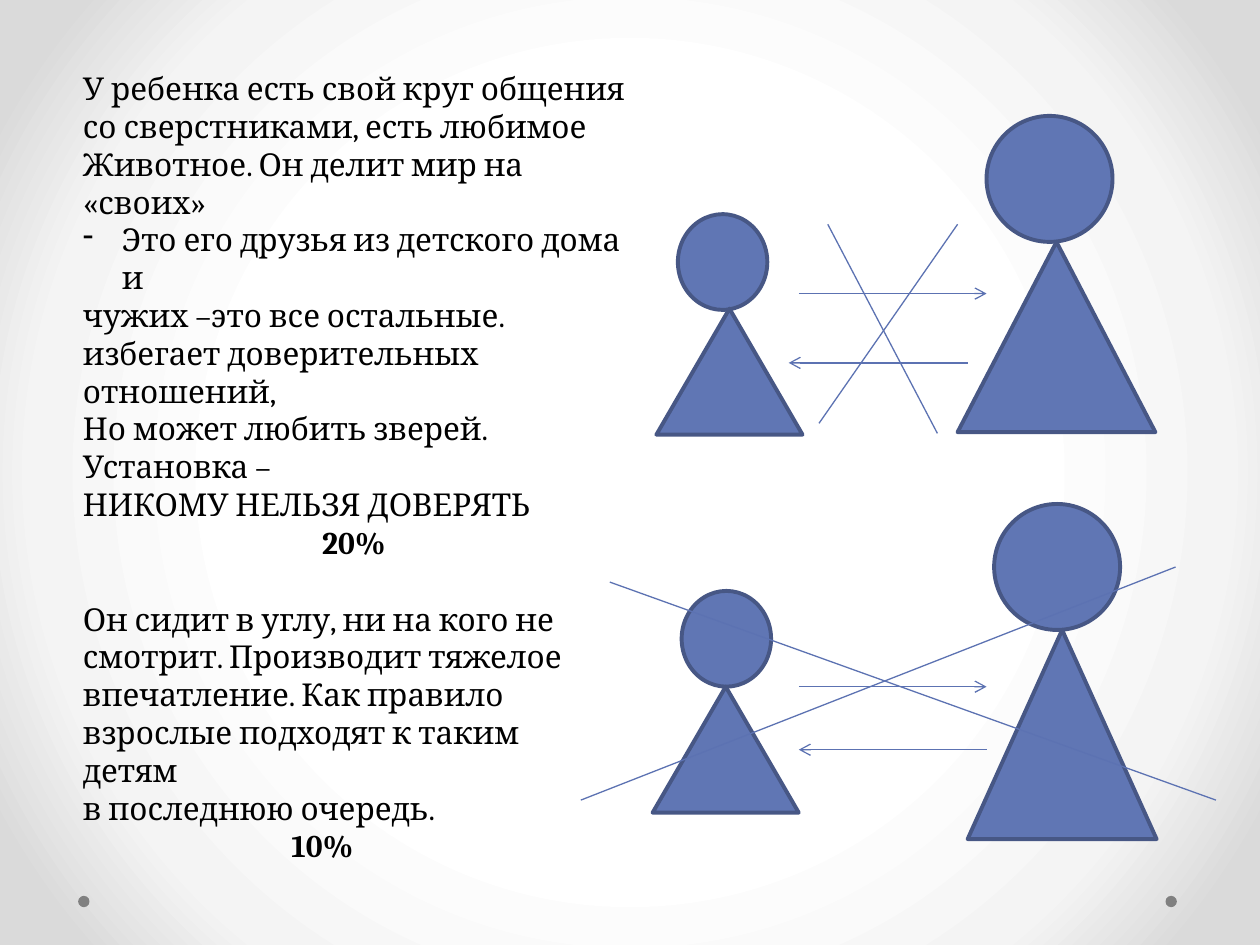
from lxml import etree
from pptx import Presentation
from pptx.dml.color import RGBColor
from pptx.enum.shapes import MSO_CONNECTOR, MSO_SHAPE
from pptx.enum.text import MSO_AUTO_SIZE, PP_ALIGN
from pptx.oxml import parse_xml
from pptx.oxml.ns import nsdecls, qn
from pptx.util import Inches, Pt

ELLIPSE = MSO_SHAPE.OVAL
TRIANGLE = MSO_SHAPE.ISOSCELES_TRIANGLE
STRAIGHT = MSO_CONNECTOR.STRAIGHT
CENTER = PP_ALIGN.CENTER
FIT_SHAPE = MSO_AUTO_SIZE.SHAPE_TO_FIT_TEXT

BLUE = RGBColor(0x60, 0x76, 0xB4)
OUTLINE = RGBColor(0x47, 0x57, 0x85)
LINE_BLUE = RGBColor(0x5C, 0x72, 0xB2)
GRAY = RGBColor(0x80, 0x80, 0x80)
BLACK = RGBColor(0, 0, 0)
BACKGROUND_STOPS = [(50, "FFFFFF"), (76, "F4F4F4"), (92, "DADADA")]

FONT = "Cambria"
TEXT_LEFT = 0.56
BULLET_INDENT = 0.31
DOT_SIZE, DOT_TOP = 0.09, 7.11
DOT_LEFTS = [9.25, 0.62]

ADULT_HEAD = (1, 1)
CHILD_HEAD = (0.71, 0.76)
CHILD_BODY = (1.16, 1)
FIGURES = [
    {"head": (7.83, 0.92, *ADULT_HEAD), "body": (7.6, 1.92, 1.57, 1.51)},
    {"head": (7.89, 4, *ADULT_HEAD), "body": (7.68, 5, 1.5, 1.66)},
    {"head": (5.38, 1.7, *CHILD_HEAD), "body": (5.21, 2.45, *CHILD_BODY)},
    {"head": (5.41, 4.69, *CHILD_HEAD), "body": (5.18, 5.45, *CHILD_BODY)},
]
ARROWS = [
    (6.34, 2.33, 7.83, 2.33),
    (7.68, 2.88, 6.26, 2.88),
    (6.34, 5.45, 7.83, 5.45),
    (7.83, 5.95, 6.34, 5.95),
]
CROSSES = [
    (7.6, 1.78, 6.5, 3.36),
    (6.57, 1.78, 7.44, 3.44),
    (4.84, 4.62, 9.65, 6.35),
    (4.61, 6.35, 9.33, 4.5),
]
TEXTS = [
    {
        "top": 0.5, "width": 4.58, "height": 3.13,
        "lines": [
            "У ребенка есть свой круг общения",
            "со сверстниками, есть любимое",
            "Животное. Он делит мир на «своих»",
            "Это его друзья из детского дома и",
            "чужих –это все остальные.",
            "избегает доверительных отношений,",
            "Но может любить зверей.",
            "Установка –",
            "НИКОМУ НЕЛЬЗЯ ДОВЕРЯТЬ",
        ],
        "bulleted": [3],
        "share": "20%",
    },
    {
        "top": 4.71, "width": 4.2, "height": 1.92,
        "lines": [
            "Он сидит в углу, ни на кого не",
            "смотрит. Производит тяжелое",
            "впечатление. Как правило",
            "взрослые подходят к таким детям",
            "в последнюю очередь.",
        ],
        "bulleted": [],
        "share": "10%",
    },
]


def set_background(slide):
    stops = "".join(
        f'<a:gs pos="{position * 1000}"><a:srgbClr val="{color}"/></a:gs>'
        for position, color in BACKGROUND_STOPS
    )
    slide.background.fill.gradient()
    old_fill = slide.element.find(".//" + qn("a:gradFill"))
    new_fill = parse_xml(
        f'<a:gradFill {nsdecls("a")} rotWithShape="1"><a:gsLst>{stops}</a:gsLst>'
        '<a:path path="circle"><a:fillToRect l="50000" t="50000" r="50000" b="50000"/>'
        "</a:path></a:gradFill>"
    )
    old_fill.getparent().replace(old_fill, new_fill)


def add_filled_shape(slide, kind, box, color, outline=None):
    shape = slide.shapes.add_shape(kind, *map(Inches, box))
    shape.shadow.inherit = False
    shape.fill.solid()
    shape.fill.fore_color.rgb = color
    if outline is None:
        shape.line.fill.background()
    else:
        shape.line.color.rgb = outline
        shape.line.width = Pt(2.25)


def add_line(slide, points, arrow=False):
    connector = slide.shapes.add_connector(STRAIGHT, *map(Inches, points))
    connector.line.color.rgb = LINE_BLUE
    connector.line.width = Pt(0.75)
    properties = connector.element.spPr
    if arrow:
        etree.SubElement(properties.find(qn("a:ln")), qn("a:tailEnd"), type="arrow")
    etree.SubElement(properties, qn("a:effectLst"))


def add_bullet(paragraph):
    properties = paragraph._p.get_or_add_pPr()
    properties.set("marL", str(Inches(BULLET_INDENT)))
    properties.set("indent", str(-Inches(BULLET_INDENT)))
    etree.SubElement(properties, qn("a:buChar"), char="-")


def add_text(slide, text):
    box = (TEXT_LEFT, text["top"], text["width"], text["height"])
    frame = slide.shapes.add_textbox(*map(Inches, box)).text_frame
    frame.word_wrap = False
    frame.auto_size = FIT_SHAPE
    frame.text = "\n".join([*text["lines"], text["share"]])
    for paragraph in frame.paragraphs:
        paragraph.font.name = FONT
        paragraph.font.size = Pt(18)
        paragraph.font.color.rgb = BLACK
        for run in paragraph.runs:
            run.font.name = FONT
            run.font.size = Pt(18)
            run.font.color.rgb = BLACK
    for index in text["bulleted"]:
        paragraph = frame.paragraphs[index]
        properties = paragraph._p.get_or_add_pPr()
        default_run = properties.find(qn("a:defRPr"))
        add_bullet(paragraph)
        properties.append(default_run)
    share = frame.paragraphs[-1]
    share.alignment = CENTER
    share.runs[0].font.bold = True


def main():
    presentation = Presentation()
    presentation.slide_width = Inches(10)
    presentation.slide_height = Inches(7.5)
    slide = presentation.slides.add_slide(presentation.slide_layouts[6])
    set_background(slide)
    for left in DOT_LEFTS:
        add_filled_shape(slide, ELLIPSE, (left, DOT_TOP, DOT_SIZE, DOT_SIZE), GRAY)
    for figure in FIGURES:
        add_filled_shape(slide, ELLIPSE, figure["head"], BLUE, OUTLINE)
        add_filled_shape(slide, TRIANGLE, figure["body"], BLUE, OUTLINE)
    for points in ARROWS:
        add_line(slide, points, arrow=True)
    for points in CROSSES:
        add_line(slide, points)
    for text in TEXTS:
        add_text(slide, text)
    presentation.save("out.pptx")


if __name__ == "__main__":
    main()
